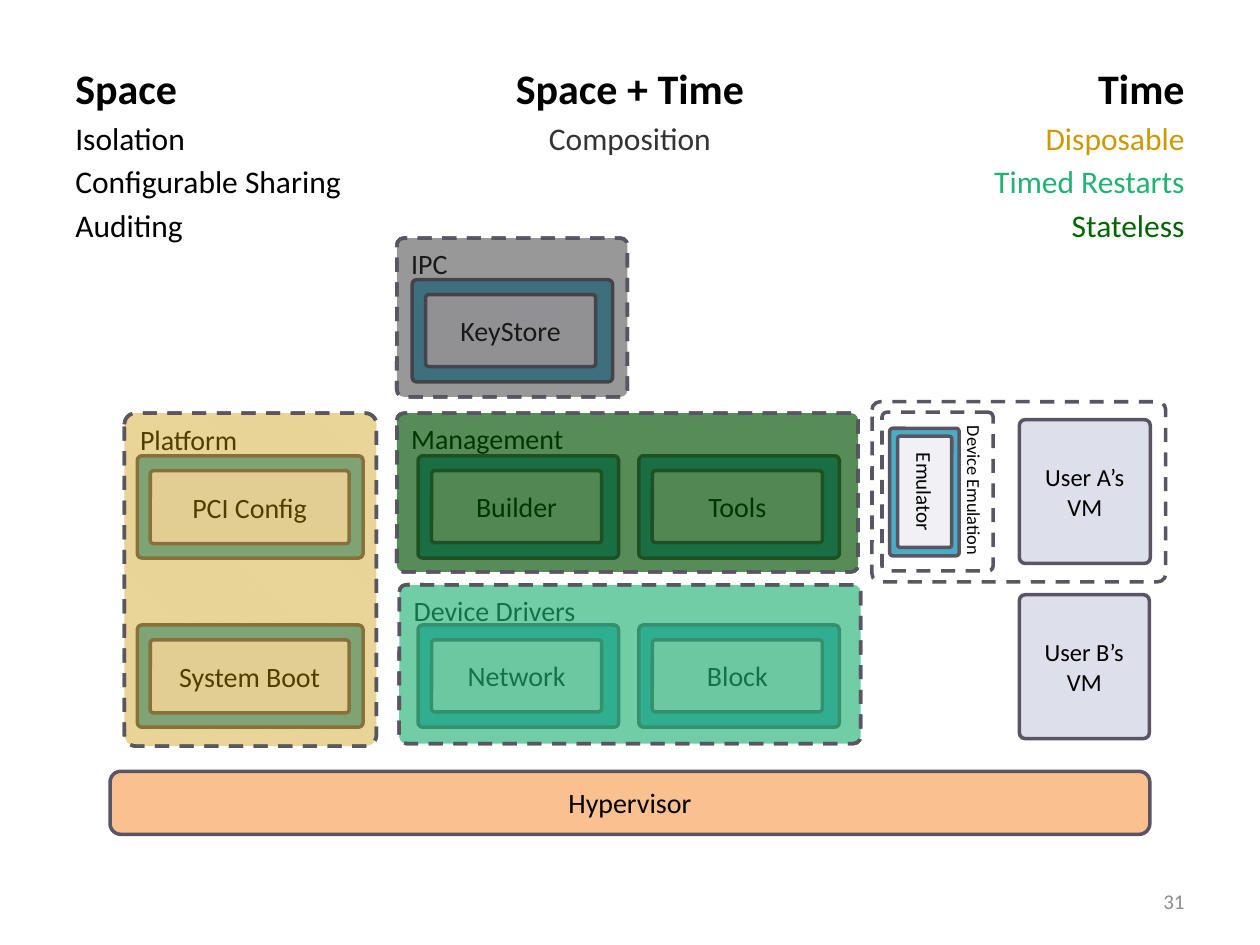
import pptx
import pptx.dml.color
import pptx.enum.dml
import pptx.enum.shapes
import pptx.enum.text
import pptx.util
from lxml import etree

Cm, Pt = pptx.util.Cm, pptx.util.Pt
ALIGN = pptx.enum.text.PP_ALIGN
ANCHOR = pptx.enum.text.MSO_ANCHOR

FONT = "Calibri"
CORNER = 0.044
COLORS = {
    "black": "000000", "number": "8C8C8C", "outline": "595562",
    "hypervisor": "FAC090", "machine": "DDDFEA", "ring": "4BACC6",
    "core": "F1F1F5", "white": "FFFFFF", "gold": "CC9900",
    "mint": "22B273", "forest": "005000", "leaf": "006600", "gray": "333333",
}

# Lengths are centimetres; boxes are left, top, width, height.
HYPERVISOR = ("Hypervisor", (2.22, 15.55, 20.96, 1.27))
MACHINES = [
    ("User A’s VM", (20.55, 8.46, 2.64, 2.9)),
    ("User B’s VM", (20.55, 11.99, 2.62, 2.9)),
]
MACHINE_FRAME = (17.58, 8.1, 5.92, 3.63)
# label, box, tint colour, tint opacity in percent
GROUPS = [
    ("Platform", (2.51, 8.33, 5.08, 6.71), "gold", 40),
    ("Device Drivers", (8.05, 11.79, 9.3, 3.2), "mint", 64),
    ("Management", (8.0, 8.33, 9.3, 3.2), "forest", 66),
    ("IPC", (8.0, 4.8, 4.65, 3.2), "gray", 50),
]
EMULATION_GROUP = ("Device Emulation", (17.3, 8.79, 3.2, 2.24))

# outer width and height, core offset, core width and height
WIDE = ((4.55, 2.06), (0.26, 0.3), (4.01, 1.47))
NARROW = ((4.04, 2.06), (0.27, 0.3), (3.43, 1.45))
SMALL = ((2.57, 1.4), (0.17, 0.15), (2.24, 1.09))
# label, left, top, sizes, text size, rotation
COMPONENTS = [
    ("System Boot", 2.77, 12.6, WIDE, 16, 0),
    ("PCI Config", 2.77, 9.19, WIDE, 16, 0),
    ("Network", 8.43, 12.6, NARROW, 16, 0),
    ("Block", 12.88, 12.6, NARROW, 16, 0),
    ("Builder", 8.43, 9.19, NARROW, 16, 0),
    ("Tools", 12.88, 9.19, NARROW, 16, 0),
    ("KeyStore", 8.31, 5.64, NARROW, 16, 0),
    ("Emulator", 17.35, 9.22, SMALL, 12, 90),
]

# box, alignment, heading, (item, colour) list
COLUMNS = [
    ((1.27, 1.14, 11.38, 4.14), ALIGN.LEFT, "Space",
     [("Isolation", "black"), ("Configurable Sharing", "black"),
      ("Auditing", "black")]),
    ((12.67, 1.14, 11.46, 4.14), ALIGN.RIGHT, "Time",
     [("Disposable", "gold"), ("Timed Restarts", "mint"),
      ("Stateless", "leaf")]),
    ((1.27, 1.14, 22.86, 4.14), ALIGN.CENTER, "Space + Time",
     [("Composition", "gray")]),
]
PAGE_NUMBER = ("31", (18.21, 17.65, 5.92, 1.02))


def rgb(name):
    return pptx.dml.color.RGBColor.from_string(COLORS[name])


def add_run(paragraph, text, size, color="black", bold=False):
    run = paragraph.add_run()
    run.text = text
    run.font.name = FONT
    run.font.size = Pt(size)
    run.font.bold = bold
    run.font.color.rgb = rgb(color)


def set_opacity(shape, percent):
    color = shape.fill._xPr.find(".//" + pptx.oxml.ns.qn("a:srgbClr"))
    alpha = etree.SubElement(color, pptx.oxml.ns.qn("a:alpha"))
    alpha.set("val", str(percent * 1000))


def add_box(slide, box, fill=None, dashed=False, corner=CORNER, rotation=0):
    shape = slide.shapes.add_shape(
        pptx.enum.shapes.MSO_SHAPE.ROUNDED_RECTANGLE, *map(Cm, box))
    shape.shadow.inherit = False
    shape.adjustments[0] = corner
    shape.rotation = rotation
    if fill:
        shape.fill.solid()
        shape.fill.fore_color.rgb = rgb(fill)
    else:
        shape.fill.background()
    shape.line.color.rgb = rgb("outline")
    shape.line.width = Pt(2)
    if dashed:
        shape.line.dash_style = pptx.enum.dml.MSO_LINE.DASH
    return shape


def add_label(shape, text, size, align=ALIGN.CENTER, anchor=ANCHOR.MIDDLE,
              color="black"):
    frame = shape.text_frame
    frame.word_wrap = True
    frame.vertical_anchor = anchor
    paragraph = frame.paragraphs[0]
    paragraph.alignment = align
    add_run(paragraph, text, size, color)


def add_group(slide, label, box, size=16, rotation=0):
    shape = add_box(slide, box, dashed=True, rotation=rotation)
    add_label(shape, label, size, ALIGN.LEFT, ANCHOR.TOP)
    return shape


def add_column(slide, box, align, heading, items):
    frame = slide.shapes.add_textbox(*map(Cm, box)).text_frame
    frame.word_wrap = True
    paragraph = frame.paragraphs[0]
    paragraph.alignment = align
    add_run(paragraph, heading, 24, bold=True)
    for text, color in items:
        paragraph = frame.add_paragraph()
        paragraph.alignment = align
        paragraph.space_before = Pt(3.2)
        add_run(paragraph, text, 18, color)


def main():
    presentation = pptx.Presentation()
    presentation.slide_width, presentation.slide_height = Cm(25.4), Cm(19.05)
    slide = presentation.slides.add_slide(presentation.slide_layouts[6])

    text, box = PAGE_NUMBER
    add_label(slide.shapes.add_textbox(*map(Cm, box)), text, 12,
              ALIGN.RIGHT, color="number")

    text, box = HYPERVISOR
    add_label(add_box(slide, box, "hypervisor", corner=0.17), text, 16)
    for text, box in MACHINES:
        add_label(add_box(slide, box, "machine"), text, 14)

    for label, box, tint, opacity in GROUPS:
        group = add_group(slide, label, box)
        if label == "Platform":
            group.fill.patterned()
            group.fill.pattern = (
                pptx.enum.dml.MSO_PATTERN.DARK_DOWNWARD_DIAGONAL)
            group.fill.fore_color.rgb = rgb("core")
            group.fill.back_color.rgb = rgb("white")
    add_group(slide, *EMULATION_GROUP, size=10.5, rotation=90)

    for label, left, top, sizes, size, rotation in COMPONENTS:
        outer, offset, core = sizes
        add_box(slide, (left, top, *outer), "ring", rotation=rotation)
        core_box = (left + offset[0], top + offset[1], *core)
        add_label(add_box(slide, core_box, "core", rotation=rotation),
                  label, size)

    add_box(slide, MACHINE_FRAME, dashed=True)
    for label, box, tint, opacity in GROUPS:
        set_opacity(add_box(slide, box, tint, dashed=True), opacity)

    for column in COLUMNS:
        add_column(slide, *column)

    presentation.save("out.pptx")


if __name__ == "__main__":
    main()
